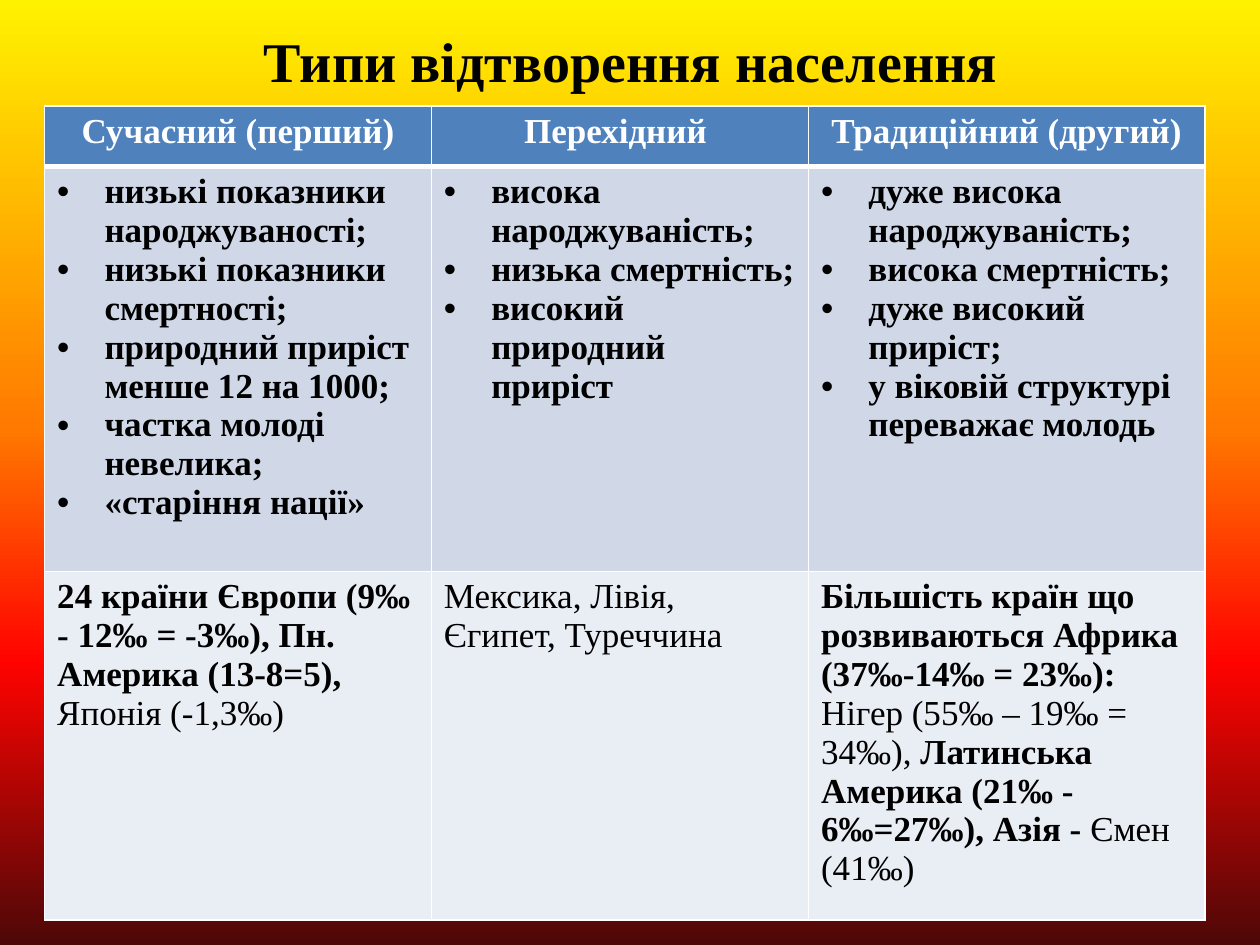
"""Build a slide comparing the types of population reproduction."""
from lxml.etree import SubElement
from pptx import Presentation
from pptx.dml.color import RGBColor as RGB
from pptx.enum.text import MSO_ANCHOR as ANCHOR, PP_ALIGN as ALIGN
from pptx.oxml.ns import qn
from pptx.util import Pt

TITLE = "Типи відтворення населення"
HEADERS = ["Сучасний (перший)", "Перехідний ", "Традиційний (другий)"]
FEATURES = [
    ["низькі показники народжуваності;", "низькі показники смертності;",
     "природний приріст менше 12 на 1000;", "частка молоді невелика;",
     "«старіння нації»"],
    ["висока народжуваність;", "низька смертність;",
     "високий природний приріст"],
    ["дуже висока народжуваність;", "висока смертність;",
     "дуже високий приріст;", "у віковій структурі переважає молодь"],
]
EXAMPLES = [
    [("24 країни Європи (9‰ - 12‰ = -3‰), Пн. Америка (13-8=5), ", True),
     ("Японія (-1,3‰)", False)],
    [("Мексика, Лівія, Єгипет, Туреччина", False)],
    [("Більшість країн що розвиваються Африка (37‰-14‰ = 23‰): ", True),
     ("Нігер (55‰ – 19‰ = 34‰), ", False),
     ("Латинська Америка (21‰ - 6‰=27‰), Азія - ", True),
     ("Ємен (41‰)", False)],
]
COLS = [221, 215.5, 226.5]
ROWS = [34.5, 231.5, 185]
THEME = {
    "font": "Times New Roman", "title": 32, "body": 20,
    "ink": "000000", "light": "FFFFFF", "border": "FFFFFF",
    "rows": ["4F81BD", "D0D8E8", "E9EDF4"],
    "sky": [(0, "FFF200"), (45, "FF7A00"), (70, "FF0300"), (100, "4D0808")],
}


def paint_background(s):
    fill = s.background.fill
    fill.gradient()
    fill.gradient_angle = 270
    stops = next(s.element.iter(qn("a:gsLst")))
    for stop in list(stops):
        stops.remove(stop)
    for pos, color in THEME["sky"]:
        stop = SubElement(stops, qn("a:gs"), pos=str(pos * 1000))
        SubElement(stop, qn("a:srgbClr"), val=color)


def add_run(p, text, size, color, bold=True):
    r = p.add_run()
    r.text = text
    r.font.name = THEME["font"]
    r.font.size = Pt(size)
    r.font.bold = bold
    r.font.color.rgb = RGB.from_string(color)


def add_bullet(p):
    pPr = p._p.get_or_add_pPr()
    pPr.set("marL", str(Pt(27)))
    pPr.set("indent", str(Pt(-27)))
    SubElement(pPr, qn("a:buFont"), typeface="Arial")
    SubElement(pPr, qn("a:buChar"), char="•")


def style_cell(cell, row):
    tcPr = cell._tc.get_or_add_tcPr()
    widths = {"L": 1, "R": 1, "T": 3 if row == 1 else 1, "B": 3 if row == 0 else 1}
    for side, width in widths.items():
        ln = SubElement(tcPr, qn(f"a:ln{side}"), w=str(Pt(width)))
        SubElement(SubElement(ln, qn("a:solidFill")), qn("a:srgbClr"), val=THEME["border"])
    cell.fill.solid()
    cell.fill.fore_color.rgb = RGB.from_string(THEME["rows"][row])


def add_title(s):
    tf = s.shapes.add_textbox(Pt(36.5), Pt(9.5), Pt(648), Pt(49.5)).text_frame
    tf.word_wrap = True
    tf.vertical_anchor = ANCHOR.MIDDLE
    p = tf.paragraphs[0]
    p.alignment = ALIGN.CENTER
    add_run(p, TITLE, THEME["title"], THEME["ink"])


def add_types_table(s):
    table = s.shapes.add_table(len(ROWS), len(COLS), Pt(25.5), Pt(60.5),
                               Pt(sum(COLS)), Pt(sum(ROWS))).table
    for row, height in zip(table.rows, ROWS):
        row.height = Pt(height)
    for col, width in zip(table.columns, COLS):
        col.width = Pt(width)
    content = [
        [[[(text, True)]] for text in HEADERS],
        [[[(text, True)] for text in items] for items in FEATURES],
        [[runs] for runs in EXAMPLES],
    ]
    for i, row in enumerate(content):
        for j, paragraphs in enumerate(row):
            cell = table.cell(i, j)
            style_cell(cell, i)
            tf = cell.text_frame
            for n, runs in enumerate(paragraphs):
                p = tf.add_paragraph() if n else tf.paragraphs[0]
                if i == 0:
                    p.alignment = ALIGN.CENTER
                elif i == 1:
                    add_bullet(p)
                for text, bold in runs:
                    add_run(p, text, THEME["body"], THEME["ink" if i else "light"], bold)


def main():
    prs = Presentation()
    prs.slide_width, prs.slide_height = Pt(720), Pt(540)
    s = prs.slides.add_slide(prs.slide_layouts[6])
    paint_background(s)
    add_title(s)
    add_types_table(s)
    prs.save("out.pptx")


if __name__ == "__main__":
    main()
